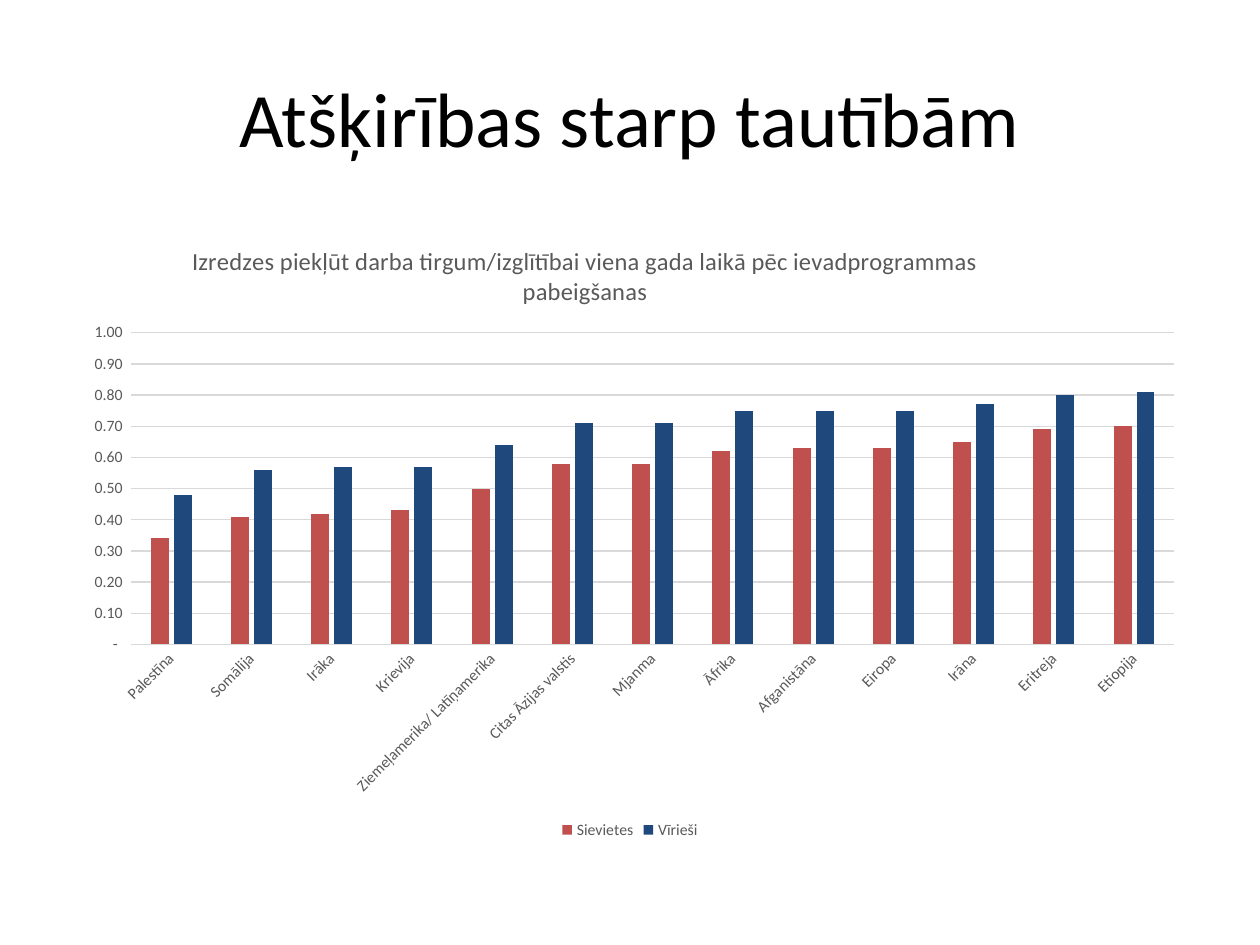
import pptx
import pptx.chart.data
import pptx.dml.color
import pptx.enum.chart
import pptx.enum.text
import pptx.oxml
import pptx.oxml.ns
import pptx.util

FACE = "Calibri"
GREY, RULE = "595959", "D9D9D9"
HEAD = "Atšķirības starp tautībām"
NOTE = ("Izredzes piekļūt darba tirgum/izglītībai viena gada laikā "
        "pēc ievadprogrammas pabeigšanas")
CATS = ["Palestīna", "Somālija", "Irāka", "Krievija",
        "Ziemeļamerika/ Latīņamerika", "Citas Āzijas valstis", "Mjanma",
        "Āfrika", "Afganistāna", "Eiropa", "Irāna", "Eritreja", "Etiopija"]
ROWS = [
    ("Sievietes", "C0504D", [0.34, 0.41, 0.42, 0.43, 0.5, 0.58, 0.58,
                             0.62, 0.63, 0.63, 0.65, 0.69, 0.7]),
    ("Vīrieši", "1F497D", [0.48, 0.56, 0.57, 0.57, 0.64, 0.71, 0.71,
                           0.75, 0.75, 0.75, 0.77, 0.8, 0.81]),
]
FORM = '_ * #,##0.00_ ;_ * \\-#,##0.00_ ;_ * "-"?'


def tint(code):
    """Turn a hex string into a colour."""
    return pptx.dml.color.RGBColor.from_string(code)


def style(font, size, code):
    """Set face, size and colour of a font."""
    font.name = FACE
    font.size = pptx.util.Pt(size)
    font.bold = False
    font.color.rgb = tint(code)


def rule(line):
    """Give a line the pale grey of the grid."""
    line.color.rgb = tint(RULE)
    line.width = pptx.util.Pt(0.75)


def place(node, index, inner="", **share):
    """Fix a chart part at shares of the chart's size."""
    for old in node.findall(pptx.oxml.ns.qn("c:layout")):
        node.remove(old)
    modes = "".join(f'<c:{key}Mode val="edge"/>' for key in "xy")
    sizes = "".join(f'<c:{key} val="{val}"/>' for key, val in share.items())
    node.insert(index, pptx.oxml.parse_xml(
        f'<c:layout {pptx.oxml.ns.nsdecls("c")}><c:manualLayout>'
        f'{inner}{modes}{sizes}</c:manualLayout></c:layout>'))


def add_head(slide):
    """Fill and place the slide title."""
    head = slide.shapes.title
    head.left, head.top, head.width, head.height = map(
        pptx.util.Inches, (0.5, 0.3, 9, 1.25))
    frame = head.text_frame
    frame.text = HEAD
    frame.vertical_anchor = pptx.enum.text.MSO_ANCHOR.MIDDLE
    line = frame.paragraphs[0]
    line.alignment = pptx.enum.text.PP_ALIGN.CENTER
    style(line.runs[0].font, 44, "000000")


def add_bars(slide):
    """Add the column chart and return it."""
    data = pptx.chart.data.CategoryChartData(number_format="0.00")
    data.categories = CATS
    for name, _, vals in ROWS:
        data.add_series(name, vals)
    chart = slide.shapes.add_chart(
        pptx.enum.chart.XL_CHART_TYPE.COLUMN_CLUSTERED,
        *map(pptx.util.Inches, (0.5, 1.75, 9, 4.95)), data).chart
    style(chart.font, 10, "000000")
    plot = chart.plots[0]
    plot.gap_width, plot.overlap = 219, -27
    plot.vary_by_categories = False
    for bar, (_, code, _) in zip(plot.series, ROWS):
        bar.format.fill.solid()
        bar.format.fill.fore_color.rgb = tint(code)
    place(chart._chartSpace.chart.plotArea, 0,
          '<c:layoutTarget val="inner"/>', x=0.06, y=0.18, w=0.92, h=0.5)
    return chart


def set_axes(chart):
    """Format both axes and the grid."""
    for axis in (chart.category_axis, chart.value_axis):
        axis.major_tick_mark = pptx.enum.chart.XL_TICK_MARK.NONE
        axis.minor_tick_mark = pptx.enum.chart.XL_TICK_MARK.NONE
        style(axis.tick_labels.font, 9, GREY)
    cats, vals = chart.category_axis, chart.value_axis
    rule(cats.format.line)
    cats._element.txPr.bodyPr.set("rot", "-2700000")
    vals.format.line.fill.background()
    vals.minimum_scale, vals.maximum_scale = 0, 1
    vals.major_unit = 0.1
    vals.has_major_gridlines = True
    rule(vals.major_gridlines.format.line)
    vals.tick_labels.number_format = FORM
    vals.tick_labels.number_format_is_linked = False


def set_text(chart):
    """Format the chart's title and legend."""
    chart.has_title = True
    title = chart.chart_title
    title.text_frame.text = NOTE
    style(title.text_frame.paragraphs[0].runs[0].font, 14, GREY)
    title.include_in_layout = False
    place(title._element, 1, x=0.11, y=0.03)
    chart.has_legend = True
    chart.legend.position = pptx.enum.chart.XL_LEGEND_POSITION.BOTTOM
    chart.legend.include_in_layout = False
    style(chart.legend.font, 9, GREY)


def main():
    """Build and save the slide."""
    deck = pptx.Presentation()
    deck.slide_width = pptx.util.Inches(10)
    deck.slide_height = pptx.util.Inches(7.5)
    slide = deck.slides.add_slide(deck.slide_layouts[5])
    add_head(slide)
    chart = add_bars(slide)
    set_axes(chart)
    set_text(chart)
    deck.save("out.pptx")


if __name__ == "__main__":
    main()
